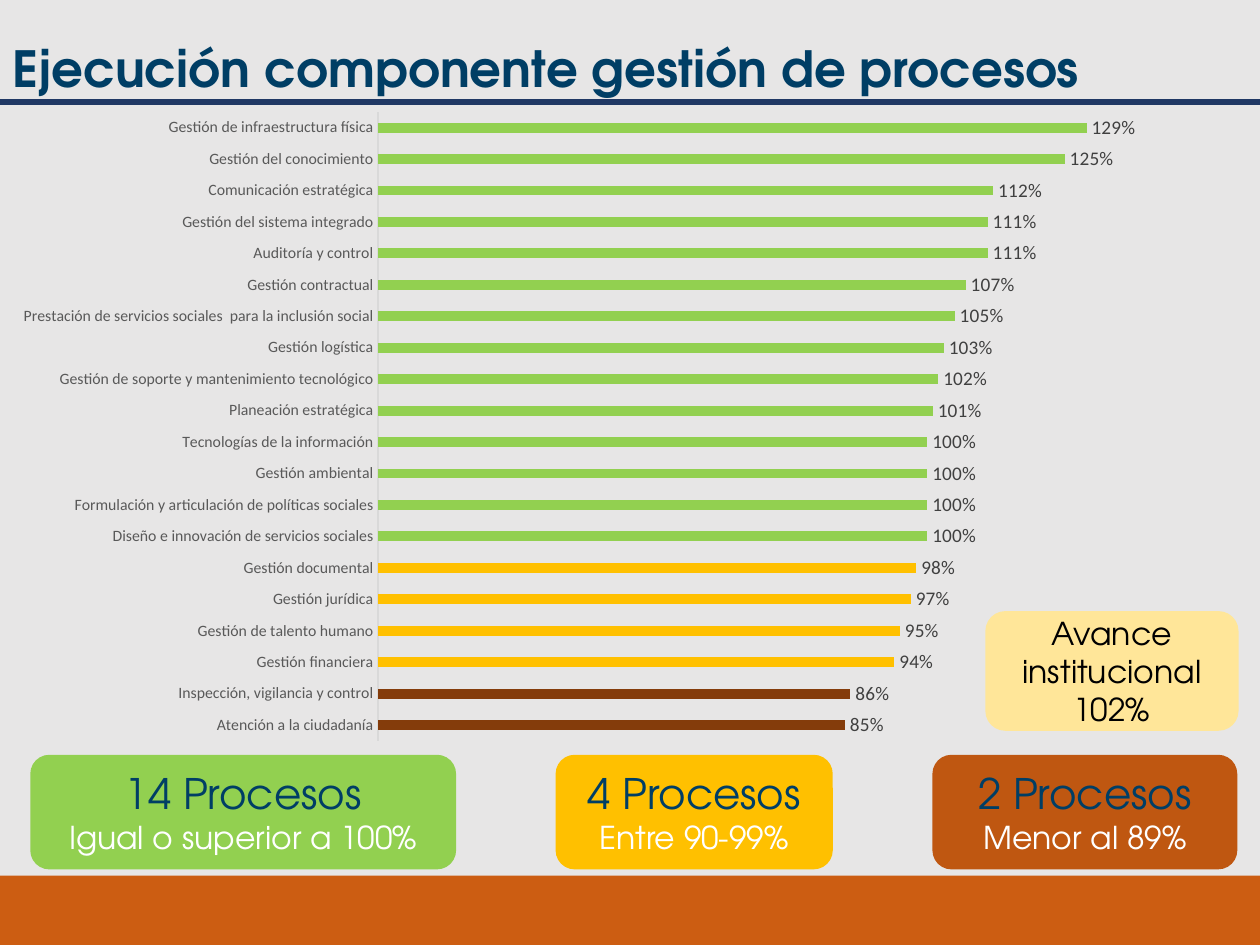
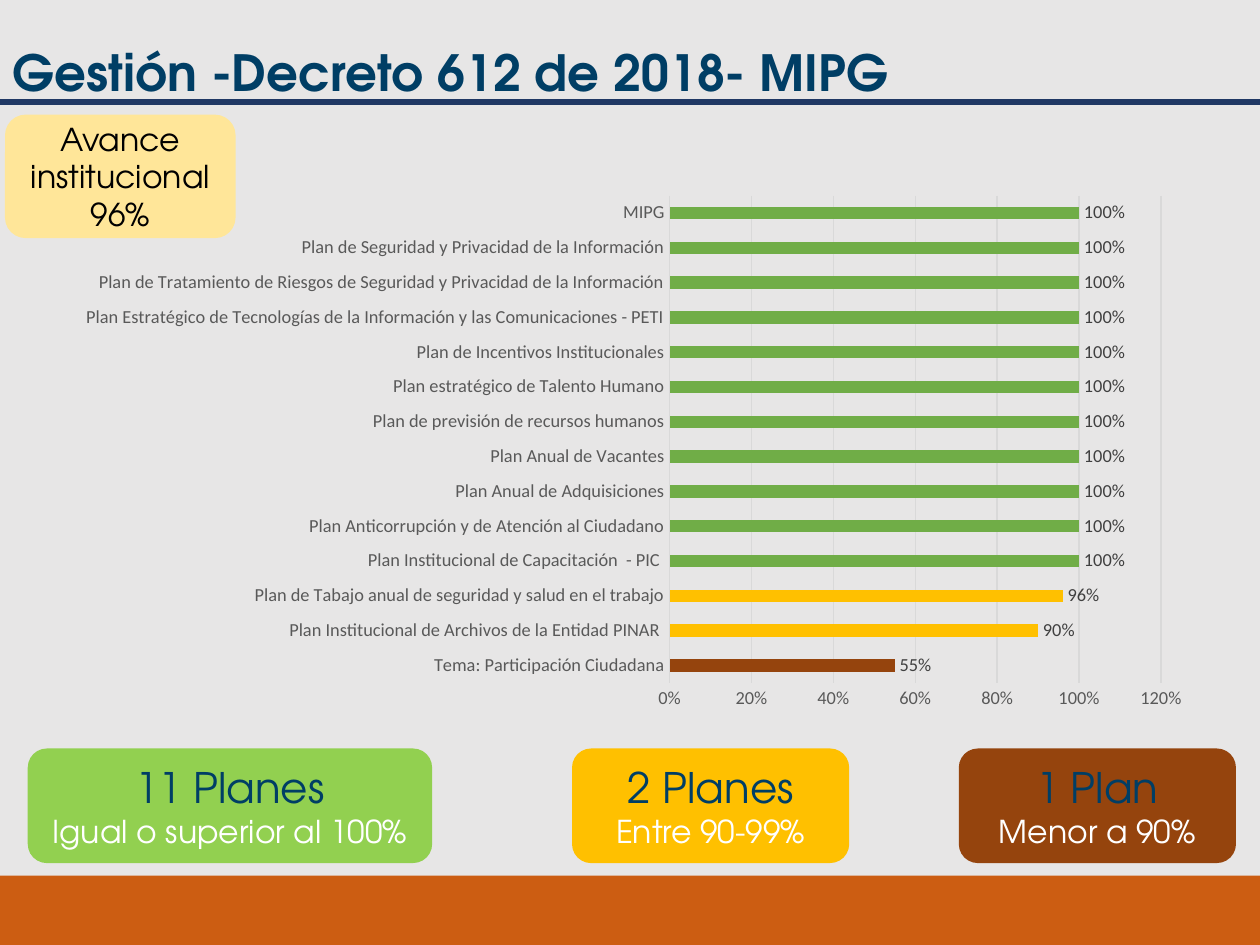
from dataclasses import dataclass

import pptx
import pptx.chart.data
import pptx.dml.color
import pptx.enum.chart
import pptx.enum.dml
import pptx.enum.shapes
import pptx.enum.text
import pptx.oxml
import pptx.oxml.ns
import pptx.util
from pptx.util import Inches

RGB = pptx.dml.color.RGBColor.from_string
Pt = pptx.util.Pt


@dataclass(frozen=True)
class Theme:
    background: str = "E7E6E6"
    footer: str = "CC5D12"
    rule: str = "203864"
    navy: str = "003E65"
    white: str = "FFFFFF"
    black: str = "000000"
    light_green: str = "92D050"
    green: str = "70AD47"
    amber: str = "FFC000"
    orange: str = "BF5711"
    brown: str = "95440D"
    dark_brown: str = "843C0B"
    cream: str = "FFE699"
    axis_text: str = "595959"
    label_text: str = "404040"
    grid: str = "D9D9D9"
    display_font: str = "TeX Gyre Adventor"
    chart_font: str = "Calibri"
    title_size: float = 28.5
    count_size: float = 24
    body_size: float = 18


THEME = Theme()


@dataclass(frozen=True)
class Box:
    left: float
    top: float
    width: float
    height: float

    def lengths(self) -> tuple:
        return tuple(Inches(v) for v in (self.left, self.top, self.width, self.height))


@dataclass(frozen=True)
class Band:
    """A card counting the items that fall in one range of progress."""
    left: float
    width: float
    fill: str
    count: str
    condition: str


@dataclass(frozen=True)
class ProgressChart:
    box: Box
    plot: Box  # fractions of the chart's box
    progress: dict[str, float]
    band_colors: tuple[str, str, str]  # full, nearly full, low
    gap: int
    maximum: float
    category_size: float
    label_size: float
    show_scale: bool


@dataclass(frozen=True)
class Report:
    title: str
    title_box: Box
    bands_top: float
    bands: tuple[Band, ...]
    overall_box: Box
    overall: tuple[str, ...]
    chart: ProgressChart


PROCESSES = Report(
    title="Ejecución componente gestión de procesos",
    title_box=Box(0, 0.28, 8.82, 0.51),
    bands_top=5.99,
    bands=(
        Band(0.24, 3.38, THEME.light_green, "14 Procesos", "Igual o superior a 100%"),
        Band(4.41, 2.2, THEME.amber, "4 Procesos", "Entre 90-99%"),
        Band(7.4, 2.42, THEME.orange, "2 Procesos", "Menor al 89%"),
    ),
    overall_box=Box(7.82, 4.85, 2.01, 0.95),
    overall=("Avance institucional", "102%"),
    chart=ProgressChart(
        box=Box(0, 0.79, 9.29, 5.2),
        plot=Box(0.323, 0.019, 0.657, 0.96),
        progress={
            "Atención a la ciudadanía": 0.85,
            "Inspección, vigilancia y control": 0.86,
            "Gestión financiera": 0.94,
            "Gestión de talento humano": 0.95,
            "Gestión jurídica": 0.97,
            "Gestión documental": 0.98,
            "Diseño e innovación de servicios sociales": 1,
            "Formulación y articulación de políticas sociales": 1,
            "Gestión ambiental": 1,
            "Tecnologías de la información": 1,
            "Planeación estratégica": 1.01,
            "Gestión de soporte y mantenimiento tecnológico": 1.02,
            "Gestión logística": 1.03,
            "Prestación de servicios sociales  para la inclusión social": 1.05,
            "Gestión contractual": 1.07,
            "Auditoría y control": 1.11,
            "Gestión del sistema integrado": 1.11,
            "Comunicación estratégica": 1.12,
            "Gestión del conocimiento": 1.25,
            "Gestión de infraestructura física": 1.29,
        },
        band_colors=(THEME.light_green, THEME.amber, THEME.dark_brown),
        gap=219, maximum=1.4, category_size=9, label_size=11, show_scale=False,
    ),
)

PLANS = Report(
    title="Gestión -Decreto 612 de 2018- MIPG",
    title_box=Box(0, 0.31, 8.44, 0.51),
    bands_top=5.94,
    bands=(
        Band(0.22, 3.21, THEME.light_green, "11 Planes", "Igual o superior al 100%"),
        Band(4.54, 2.2, THEME.amber, "2 Planes", "Entre 90-99%"),
        Band(7.61, 2.2, THEME.brown, "1 Plan", "Menor a 90%"),
    ),
    overall_box=Box(0.04, 0.91, 1.83, 0.98),
    overall=("Avance institucional 96%",),
    chart=ProgressChart(
        box=Box(0.22, 1.4, 9.33, 4.38),
        plot=Box(0.546, 0.035, 0.418, 0.883),
        progress={
            "Tema: Participación Ciudadana": 0.55,
            "Plan Institucional de Archivos de la Entidad PINAR ": 0.9,
            "Plan de Tabajo anual de seguridad y salud en el trabajo": 0.96,
            "Plan Institucional de Capacitación  - PIC ": 1,
            "Plan Anticorrupción y de Atención al Ciudadano": 1,
            "Plan Anual de Adquisiciones": 1,
            "Plan Anual de Vacantes": 1,
            "Plan de previsión de recursos humanos": 1,
            "Plan estratégico de Talento Humano": 1,
            "Plan de Incentivos Institucionales": 1,
            "Plan Estratégico de Tecnologías de la Información y las Comunicaciones - PETI": 1,
            "Plan de Tratamiento de Riesgos de Seguridad y Privacidad de la Información": 1,
            "Plan de Seguridad y Privacidad de la Información": 1,
            "MIPG": 1,
        },
        band_colors=(THEME.green, THEME.amber, THEME.brown),
        gap=182, maximum=1.2, category_size=10.5, label_size=10.5, show_scale=True,
    ),
)


def style_font(font, name: str, size: float, color: str, bold: bool = False) -> None:
    font.name = name
    font.size = Pt(size)
    font.bold = bold
    font.color.rgb = RGB(color)


def add_filled(slide, preset, box: Box, color: str):
    shape = slide.shapes.add_shape(preset, *box.lengths())
    shape.shadow.inherit = False
    shape.fill.solid()
    shape.fill.fore_color.rgb = RGB(color)
    shape.line.fill.background()
    return shape


def add_frame(slide) -> None:
    """Draw the footer strip and the rule under the title."""
    add_filled(slide, pptx.enum.shapes.MSO_SHAPE.RECTANGLE, Box(0, 6.95, 10, 0.55), THEME.footer)
    rule = slide.shapes.add_connector(
        pptx.enum.shapes.MSO_CONNECTOR.STRAIGHT,
        Inches(0), Inches(0.81), Inches(10), Inches(0.81))
    rule.line.color.rgb = RGB(THEME.rule)
    rule.line.width = Pt(3)
    rule._element.spPr.append(pptx.oxml.parse_xml(
        f"<a:effectLst {pptx.oxml.ns.nsdecls('a')}/>"))


def set_title(slide, text: str, box: Box) -> None:
    title = slide.shapes.title
    title.left, title.top, title.width, title.height = box.lengths()
    frame = title.text_frame
    frame.text = text
    frame.auto_size = pptx.enum.text.MSO_AUTO_SIZE.NONE
    frame.vertical_anchor = pptx.enum.text.MSO_ANCHOR.MIDDLE
    paragraph = frame.paragraphs[0]
    paragraph.alignment = pptx.enum.text.PP_ALIGN.LEFT
    style_font(paragraph.font, THEME.display_font, THEME.title_size, THEME.navy, bold=True)


def add_card(slide, box: Box, fill: str, lines: list[tuple[str, float, str]]) -> None:
    """Draw a rounded card; each line is its text, size and colour."""
    card = add_filled(slide, pptx.enum.shapes.MSO_SHAPE.ROUNDED_RECTANGLE, box, fill)
    frame = card.text_frame
    frame.word_wrap = True
    frame.vertical_anchor = pptx.enum.text.MSO_ANCHOR.MIDDLE
    frame.text = "\n".join(text for text, _, _ in lines)
    for paragraph, (_, size, color) in zip(frame.paragraphs, lines):
        paragraph.alignment = pptx.enum.text.PP_ALIGN.CENTER
        style_font(paragraph.font, THEME.display_font, size, color)


def set_plot_area(chart, plot: Box) -> None:
    """Fix the inner plot area as fractions of the chart."""
    area = chart._chartSpace.chart.plotArea
    for layout in area.findall(pptx.oxml.ns.qn("c:layout")):
        area.remove(layout)
    area.insert(0, pptx.oxml.parse_xml(
        f'<c:layout {pptx.oxml.ns.nsdecls("c")}><c:manualLayout>'
        '<c:layoutTarget val="inner"/><c:xMode val="edge"/><c:yMode val="edge"/>'
        f'<c:x val="{plot.left}"/><c:y val="{plot.top}"/>'
        f'<c:w val="{plot.width}"/><c:h val="{plot.height}"/>'
        '</c:manualLayout></c:layout>'))


def style_axes(chart, design: ProgressChart) -> None:
    no_tick = pptx.enum.chart.XL_TICK_MARK.NONE
    categories, scale = chart.category_axis, chart.value_axis
    for axis in (categories, scale):
        axis.major_tick_mark = axis.minor_tick_mark = no_tick
        style_font(axis.tick_labels.font, THEME.chart_font, design.category_size, THEME.axis_text)
    categories.format.line.color.rgb = RGB(THEME.grid)
    categories.format.line.width = Pt(0.75)
    scale.minimum_scale, scale.maximum_scale, scale.major_unit = 0, design.maximum, 0.2
    scale.tick_labels.number_format = "0%"
    scale.tick_labels.number_format_is_linked = False
    scale.format.line.fill.background()
    scale.visible = scale.has_major_gridlines = design.show_scale
    if design.show_scale:
        scale.major_gridlines.format.line.color.rgb = RGB(THEME.grid)
        scale.major_gridlines.format.line.width = Pt(0.75)


def add_progress_chart(slide, design: ProgressChart) -> None:
    data = pptx.chart.data.CategoryChartData(number_format="0%")
    data.categories = list(design.progress)
    data.add_series("Series 1", list(design.progress.values()))
    chart = slide.shapes.add_chart(
        pptx.enum.chart.XL_CHART_TYPE.BAR_CLUSTERED, *design.box.lengths(), data).chart
    chart.has_legend = chart.has_title = False
    style_font(chart.font, THEME.chart_font, design.category_size, THEME.black)
    set_plot_area(chart, design.plot)
    style_axes(chart, design)

    bars = chart.plots[0]
    bars.gap_width = design.gap
    bars.vary_by_categories = False
    full, nearly, low = design.band_colors
    series = bars.series[0]
    series.format.fill.solid()
    series.format.fill.fore_color.rgb = RGB(full)
    for index, value in enumerate(design.progress.values()):
        if value < 1:
            fill = series.points[index].format.fill
            fill.solid()
            fill.fore_color.rgb = RGB(nearly if value >= 0.9 else low)

    bars.has_data_labels = True
    labels = bars.data_labels
    labels.show_value = True
    labels.number_format = "0%"
    labels.number_format_is_linked = False
    labels.position = pptx.enum.chart.XL_LABEL_POSITION.OUTSIDE_END
    style_font(labels.font, THEME.chart_font, design.label_size, THEME.label_text)


def add_report(deck, report: Report) -> None:
    slide = deck.slides.add_slide(deck.slide_layouts.get_by_name("Title Only"))
    add_frame(slide)
    set_title(slide, report.title, report.title_box)
    for band in report.bands:
        add_card(slide, Box(band.left, report.bands_top, band.width, 0.91), band.fill,
                 [(band.count, THEME.count_size, THEME.navy),
                  (band.condition, THEME.body_size, THEME.white)])
    add_card(slide, report.overall_box, THEME.cream,
             [(text, THEME.body_size, THEME.black) for text in report.overall])
    add_progress_chart(slide, report.chart)


def main() -> None:
    deck = pptx.Presentation()
    deck.slide_width, deck.slide_height = Inches(10), Inches(7.5)
    backdrop = deck.slide_master.background.fill
    backdrop.solid()
    backdrop.fore_color.rgb = RGB(THEME.background)
    for report in (PROCESSES, PLANS):
        add_report(deck, report)
    deck.save("out.pptx")


if __name__ == "__main__":
    main()
